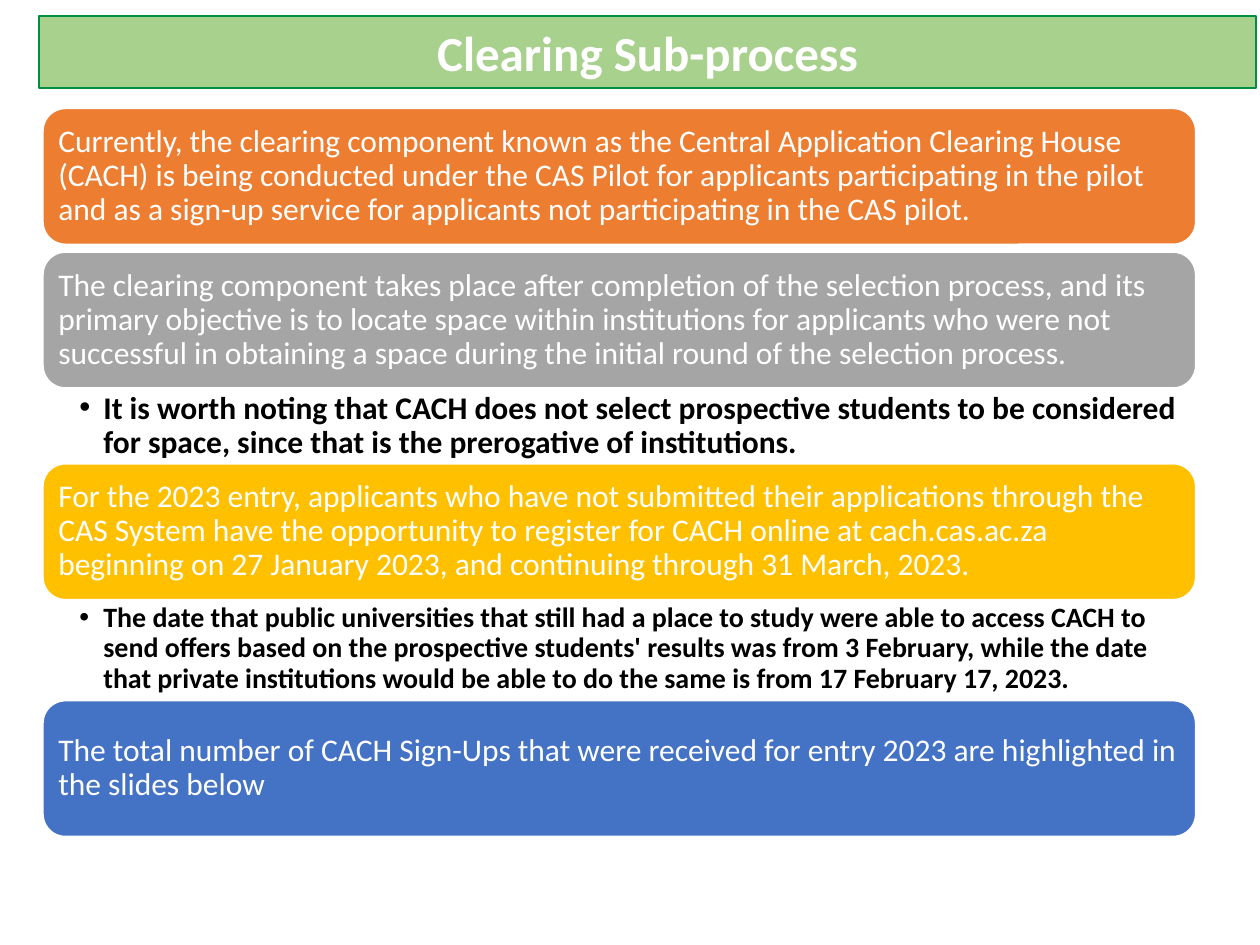
from dataclasses import dataclass

from lxml.etree import SubElement
from pptx import Presentation
from pptx.dml.color import RGBColor
from pptx.enum.shapes import MSO_SHAPE
from pptx.enum.text import MSO_ANCHOR, PP_ALIGN
from pptx.oxml.ns import qn
from pptx.util import Inches, Pt


@dataclass(frozen=True)
class Theme:
    font: str = "Calibri"
    white: str = "FFFFFF"
    black: str = "000000"
    banner: str = "A9D18E"
    banner_line: str = "008E40"
    orange: str = "ED7D31"
    grey: str = "A5A5A5"
    gold: str = "FFC000"
    blue: str = "4472C4"
    title_size: int = 28
    body_size: int = 18
    small_size: int = 16


@dataclass(frozen=True)
class Card:
    text: str
    fill: str
    space_below: float = 0
    note: str = ""
    note_size: int = 0


THEME = Theme()
LEFT, WIDTH, FIRST_TOP, CARD_HEIGHT = 0.34, 9.15, 0.86, 1.08

CARDS = (
    Card("Currently, the clearing component known as the Central Application Clearing House "
         "(CACH) is being conducted under the CAS Pilot for applicants participating in the "
         "pilot and as a sign-up service for applicants not participating in the CAS pilot.",
         THEME.orange, 0.06),
    Card("The clearing component takes place after completion of the selection process, and "
         "its primary objective is to locate space within institutions for applicants who were "
         "not successful in obtaining a space during the initial round of the selection process.",
         THEME.grey, 0.6,
         "It is worth noting that CACH does not select prospective students to be considered "
         "for space, since that is the prerogative of institutions.", THEME.body_size),
    Card("For the 2023 entry, applicants who have not submitted their applications through the "
         "CAS System have the opportunity to register for CACH online at cach.cas.ac.za "
         "beginning on 27 January 2023, and continuing through 31 March, 2023.",
         THEME.gold, 0.8,
         "The date that public universities that still had a place to study were able to access "
         "CACH to send offers based on the prospective students' results was from 3 February, "
         "while the date that private institutions would be able to do the same is from "
         "17 February 17, 2023.", THEME.small_size),
    Card("The total number of CACH Sign-Ups that were received for entry 2023 are highlighted "
         "in the slides below", THEME.blue),
)


def set_attributes(target, values: dict) -> None:
    for name, value in values.items():
        setattr(target, name, value)


def write_text(box, text: str, size: int, color: str, bold: bool = False,
               paragraph_format: dict | None = None, **frame_format):
    """Fill the box with one formatted paragraph and return it."""
    set_attributes(box.text_frame, {"word_wrap": True, **frame_format})
    para = box.text_frame.paragraphs[0]
    set_attributes(para, paragraph_format or {"alignment": PP_ALIGN.LEFT, "line_spacing": 0.9})
    span = para.add_run()
    span.text = text
    set_attributes(span.font, {"name": THEME.font, "size": Pt(size), "bold": bold})
    span.font.color.rgb = RGBColor.from_string(color)
    return para


def add_panel(page, kind: MSO_SHAPE, left: float, top: float, width: float, height: float,
              fill: str, line: str):
    panel = page.shapes.add_shape(kind, Inches(left), Inches(top), Inches(width), Inches(height))
    panel.shadow.inherit = False
    panel.fill.solid()
    panel.fill.fore_color.rgb = RGBColor.from_string(fill)
    panel.line.color.rgb = RGBColor.from_string(line)
    panel.line.width = Pt(1)
    return panel


def add_title(page, text: str) -> None:
    banner = add_panel(page, MSO_SHAPE.RECTANGLE, 0.31, 0.13, 9.66, 0.57,
                       THEME.banner, THEME.banner_line)
    write_text(banner, text, THEME.title_size, THEME.white, True,
               {"alignment": PP_ALIGN.CENTER}, vertical_anchor=MSO_ANCHOR.MIDDLE)


def add_card(page, card: Card, top: float) -> None:
    panel = add_panel(page, MSO_SHAPE.ROUNDED_RECTANGLE, LEFT, top, WIDTH, CARD_HEIGHT,
                      card.fill, THEME.white)
    inset = Inches(0.07)
    write_text(panel, card.text, THEME.body_size, THEME.white,
               vertical_anchor=MSO_ANCHOR.MIDDLE, margin_left=inset, margin_right=inset,
               margin_top=inset, margin_bottom=inset)


def add_note(page, card: Card, top: float) -> None:
    """Add the bulleted remark that fills the space below a card."""
    box = page.shapes.add_textbox(Inches(LEFT), Inches(top), Inches(WIDTH),
                                  Inches(card.space_below))
    para = write_text(box, card.note, card.note_size, THEME.black, True,
                      margin_left=Inches(0.29), margin_right=Inches(0.12),
                      margin_top=Inches(0.03), margin_bottom=Inches(0.03))
    para.level = 1
    properties = para._p.get_or_add_pPr()
    properties.set("marL", str(Inches(0.19)))
    properties.set("indent", str(-Inches(0.19)))
    SubElement(properties, qn("a:buFont"), typeface="Arial")
    SubElement(properties, qn("a:buChar"), char="•")


def main() -> None:
    deck = Presentation()
    deck.slide_width, deck.slide_height = Inches(10), Inches(7.5)
    page = deck.slides.add_slide(deck.slide_layouts[6])
    add_title(page, "Clearing Sub-process")
    top = FIRST_TOP
    for card in CARDS:
        add_card(page, card, top)
        top += CARD_HEIGHT
        if card.note:
            add_note(page, card, top)
        top += card.space_below
    deck.save("out.pptx")


if __name__ == "__main__":
    main()
